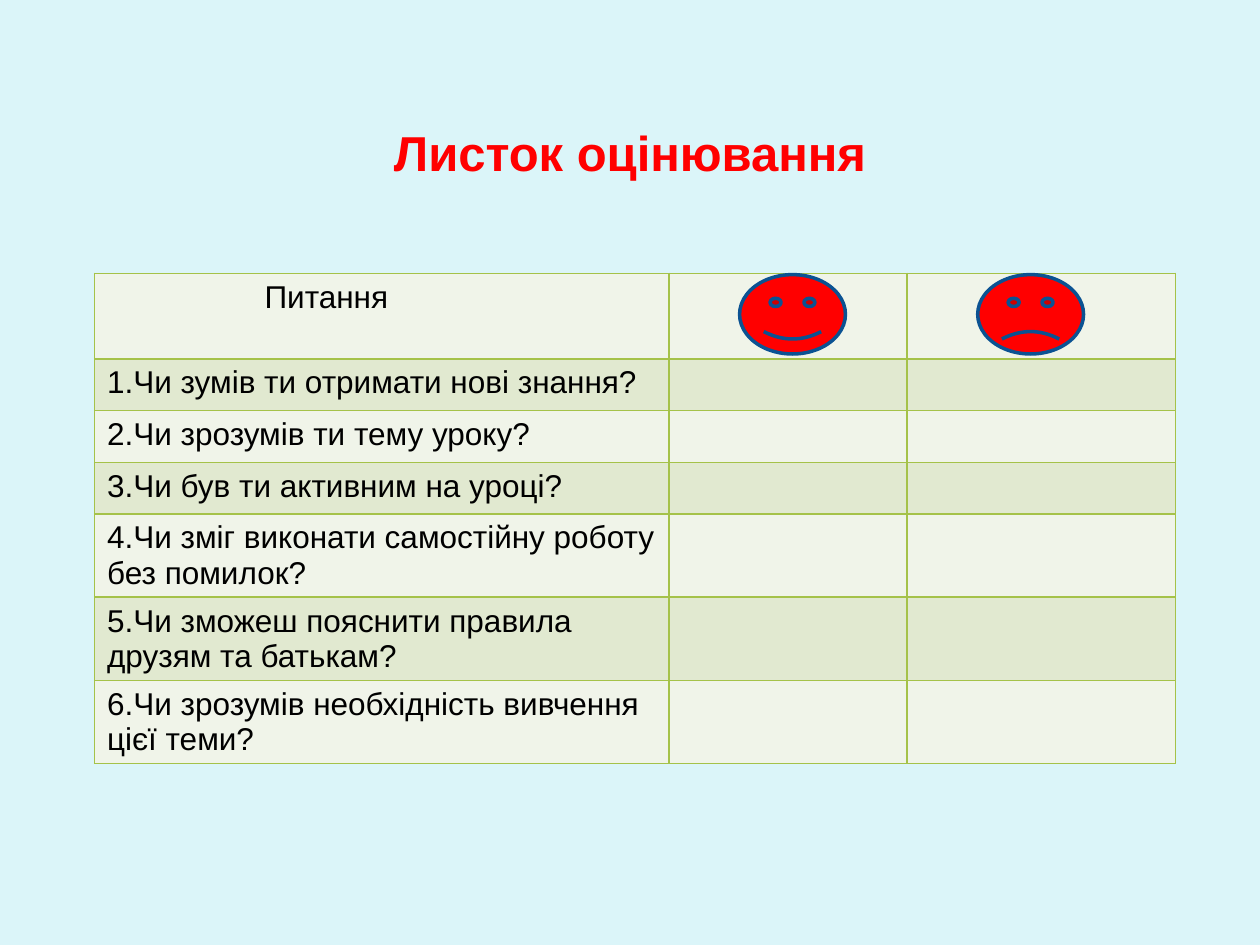
from dataclasses import dataclass

from lxml import etree
from pptx import Presentation
from pptx.dml.color import RGBColor
from pptx.enum.shapes import MSO_SHAPE
from pptx.enum.text import MSO_ANCHOR, PP_ALIGN
from pptx.oxml.ns import qn
from pptx.util import Inches, Pt

SMILEY = MSO_SHAPE.SMILEY_FACE
MIDDLE = MSO_ANCHOR.MIDDLE
CENTER = PP_ALIGN.CENTER

FONT = "Arial"
HEX = {
    "back": "DBF5F9",
    "red": "FF0000",
    "text": "000000",
    "light": "F0F4E9",
    "green": "E1E9D0",
    "border": "A5C249",
    "blue": "0B5292",
}


@dataclass
class Row:
    text: str
    height: float
    indent: float = 0.1


@dataclass
class Face:
    left: float
    mouth: float


COLS = [4.56, 1.89, 2.13]
ROWS = [
    Row("Питання", 0.68, 1.35),
    Row("1.Чи зумів ти отримати нові знання?", 0.41),
    Row("2.Чи зрозумів ти тему уроку?", 0.41),
    Row("3.Чи був ти активним на уроці?", 0.41),
    Row("4.Чи зміг виконати самостійну роботу без помилок?", 0.66),
    Row("5.Чи зможеш пояснити правила друзям та батькам?", 0.66),
    Row("6.Чи зрозумів необхідність вивчення цієї теми?", 0.66),
]
FACES = [Face(5.87, 0.05), Face(7.76, -0.05)]


def color(name: str) -> RGBColor:
    return RGBColor.from_string(HEX[name])


def style(par, size: int, name: str, bold: bool = False) -> None:
    font = par.font
    font.name, font.size, font.bold = FONT, Pt(size), bold
    font.color.rgb = color(name)


def add_title(slide, text: str) -> None:
    title = slide.shapes.title
    title.left, title.top = Inches(0.5), Inches(0.58)
    title.width, title.height = Inches(9), Inches(1.25)
    frame = title.text_frame
    frame.text = text
    frame.vertical_anchor = MIDDLE
    par = frame.paragraphs[0]
    par.alignment = CENTER
    style(par, 28, "red", True)


def add_border(cell) -> None:
    props = cell._tc.get_or_add_tcPr()
    for side in ("lnL", "lnR", "lnT", "lnB"):
        line = etree.SubElement(props, qn(f"a:{side}"), w=str(Pt(1)))
        fill = etree.SubElement(line, qn("a:solidFill"))
        etree.SubElement(fill, qn("a:srgbClr"), val=HEX["border"])


def add_grid(slide, rows: list[Row], cols: list[float]) -> None:
    high = sum(row.height for row in rows)
    table = slide.shapes.add_table(
        len(rows), len(cols), Inches(0.75), Inches(2.17),
        Inches(sum(cols)), Inches(high)).table
    for col, width in zip(table.columns, cols):
        col.width = Inches(width)
    for i, row in enumerate(rows):
        table.rows[i].height = Inches(row.height)
        for j, cell in enumerate(table.rows[i].cells):
            add_border(cell)
            cell.fill.solid()
            cell.fill.fore_color.rgb = color("green" if i % 2 else "light")
            if j == 0:
                cell.text = row.text
                cell.margin_left = Inches(row.indent)
            style(cell.text_frame.paragraphs[0], 18, "text")


def add_face(slide, face: Face) -> None:
    shape = slide.shapes.add_shape(
        SMILEY, Inches(face.left), Inches(2.18), Inches(0.84), Inches(0.63))
    shape.adjustments[0] = face.mouth
    shape.shadow.inherit = False
    shape.fill.solid()
    shape.fill.fore_color.rgb = color("red")
    shape.line.color.rgb = color("blue")
    shape.line.width = Pt(2)


def main() -> None:
    # Slide and background
    deck = Presentation()
    deck.slide_width, deck.slide_height = Inches(10), Inches(7.5)
    slide = deck.slides.add_slide(deck.slide_layouts[5])
    back = slide.background.fill
    back.solid()
    back.fore_color.rgb = color("back")

    # Title, question table, then the faces over its header
    add_title(slide, "Листок оцінювання")
    add_grid(slide, ROWS, COLS)
    for face in FACES:
        add_face(slide, face)
    deck.save("out.pptx")


if __name__ == "__main__":
    main()
